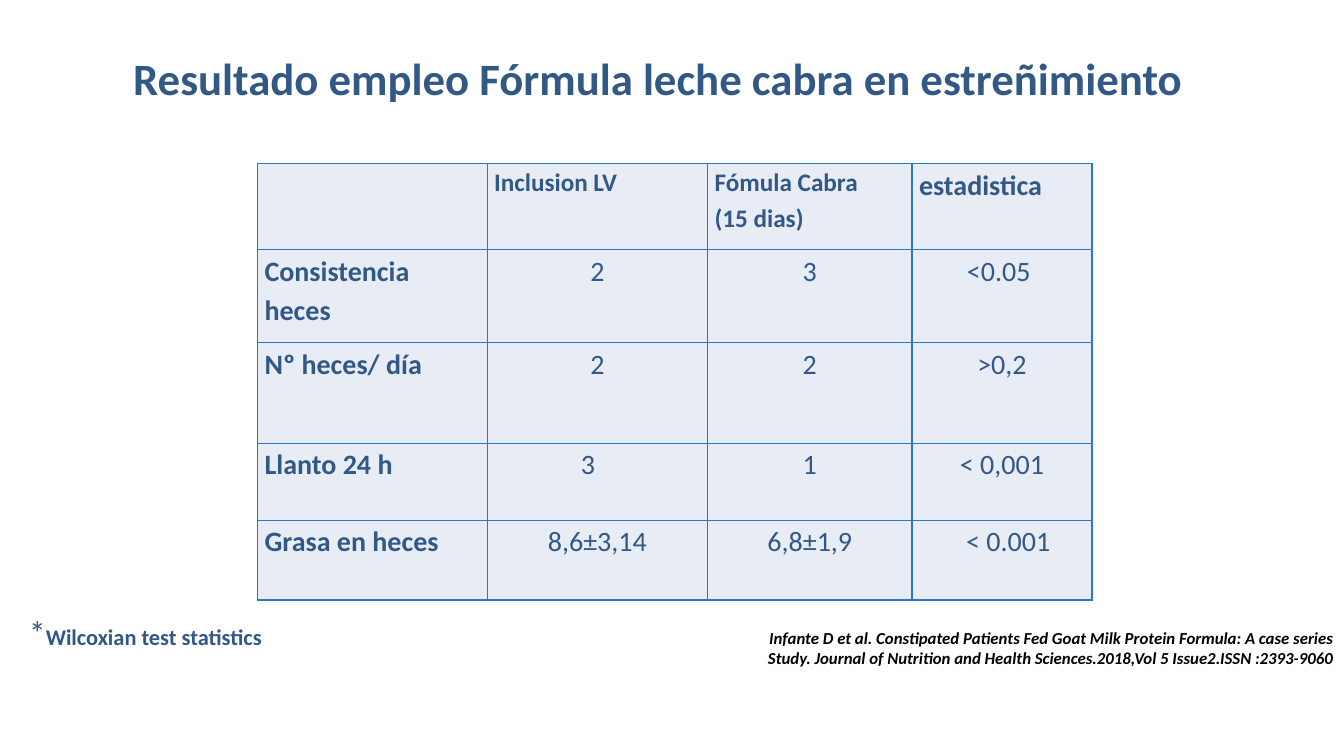
import pptx
import pptx.dml.color
import pptx.enum.text
import pptx.oxml.ns
import pptx.util
from lxml import etree

Pt = pptx.util.Pt
Align = pptx.enum.text.PP_ALIGN
Anchor = pptx.enum.text.MSO_ANCHOR


def color(value):
    return pptx.dml.color.RGBColor.from_string(value)


class Slide:
    blue, black, cell_fill, border = "325886", "000000", "E8ECF5", "287AC8"
    font = "Calibri"

    def __init__(self, deck):
        self.page = deck.slides.add_slide(deck.slide_layouts[6])

    def fill_para(self, para, spans, para_format):
        for name, value in para_format.items():
            setattr(para, name, value)
        for text, size, tint, styles in spans:
            span = para.add_run()
            span.text = text
            span.font.color.rgb = color(tint)
            span_format = {"name": self.font, "size": Pt(size), **styles}
            for name, value in span_format.items():
                setattr(span.font, name, value)

    def text(self, place, spans, anchor=Anchor.TOP, **para_format):
        box = self.page.shapes.add_textbox(*map(Pt, place))
        box.text_frame.word_wrap = True
        box.text_frame.vertical_anchor = anchor
        self.fill_para(box.text_frame.paragraphs[0], spans, para_format)

    def outline(self, cell):
        properties = cell._tc.get_or_add_tcPr()
        qn = pptx.oxml.ns.qn
        for position, side in enumerate(("lnL", "lnR", "lnT", "lnB")):
            line = etree.Element(qn(f"a:{side}"), w=str(Pt(1)))
            fill = etree.SubElement(line, qn("a:solidFill"))
            etree.SubElement(fill, qn("a:srgbClr"), val=self.border)
            properties.insert(position, line)

    def table(self, left, top, widths, heights, rows, nudges):
        frame = self.page.shapes.add_table(
            len(heights), len(widths), Pt(left), Pt(top),
            Pt(sum(widths)), Pt(sum(heights)))
        grid = frame.table
        grid.first_row = grid.horz_banding = False
        for column, width in zip(grid.columns, widths):
            column.width = Pt(width)
        for row, height in zip(grid.rows, heights):
            row.height = Pt(height)
        for r, texts in enumerate(rows):
            for c, text in enumerate(texts):
                cell = grid.cell(r, c)
                extra_left, extra_right = nudges.get((r, c), (0, 0))
                margins = {"margin_left": Pt(5 + extra_left),
                           "margin_right": Pt(5 + extra_right),
                           "margin_top": 0, "margin_bottom": 0}
                for name, value in margins.items():
                    setattr(cell, name, value)
                cell.fill.solid()
                cell.fill.fore_color.rgb = color(self.cell_fill)
                self.outline(cell)
                heading = r == 0 or c == 0
                size = 18 if r == 0 and c < 3 else 20
                para_format = {"line_spacing": 1.15,
                               "alignment": Align.LEFT if heading else Align.CENTER}
                for n, line in enumerate(text.split("\n") if text else []):
                    frame_text = cell.text_frame
                    para = frame_text.add_paragraph() if n else frame_text.paragraphs[0]
                    self.fill_para(para, [(line, size, self.blue, {"bold": heading})],
                                   para_format)


def main():
    deck = pptx.Presentation()
    deck.slide_width, deck.slide_height = Pt(960), Pt(540)
    slide = Slide(deck)

    # Title
    slide.text((53.3, -56.2, 833.8, 223.2),
               [("Resultado empleo Fórmula leche cabra en estreñimiento",
                 32, slide.blue, {"bold": True})],
               Anchor.MIDDLE, alignment=Align.CENTER)

    # Citation
    slide.text((532.8, 445, 427, 46),
               [("Infante D et al. Constipated Patients Fed Goat Milk Protein Formula: "
                 "A case series Study. Journal of Nutrition and Health Sciences.2018,"
                 "Vol 5 Issue2.ISSN :2393-9060",
                 12, slide.black, {"bold": True, "italic": True})],
               alignment=Align.RIGHT)

    # Results, with small sideways shifts for three of the values
    rows = [
        ("", "Inclusion LV", "Fómula Cabra\n(15 dias)", "estadistica"),
        ("Consistencia heces", "2", "3", "<0.05"),
        ("Nº heces/ día", "2", "2", ">0,2"),
        ("Llanto 24 h", "3", "1", "< 0,001"),
        ("Grasa en heces", "8,6±3,14", "6,8±1,9", "< 0.001"),
    ]
    nudges = {(1, 3): (0, 4.5), (3, 1): (0, 13.5), (4, 3): (9, 0)}
    slide.table(184, 116.6, (164, 157.5, 146, 128.5), (61.5, 66.5, 72, 55, 57),
                rows, nudges)

    # Footnote
    slide.text((13.7, 443.5, 388, 12.2),
               [("*", 24, slide.blue, {}),
                ("Wilcoxian test statistics", 16, slide.blue, {"bold": True})],
               Anchor.MIDDLE, line_spacing=1.15)

    deck.save("out.pptx")


if __name__ == "__main__":
    main()
